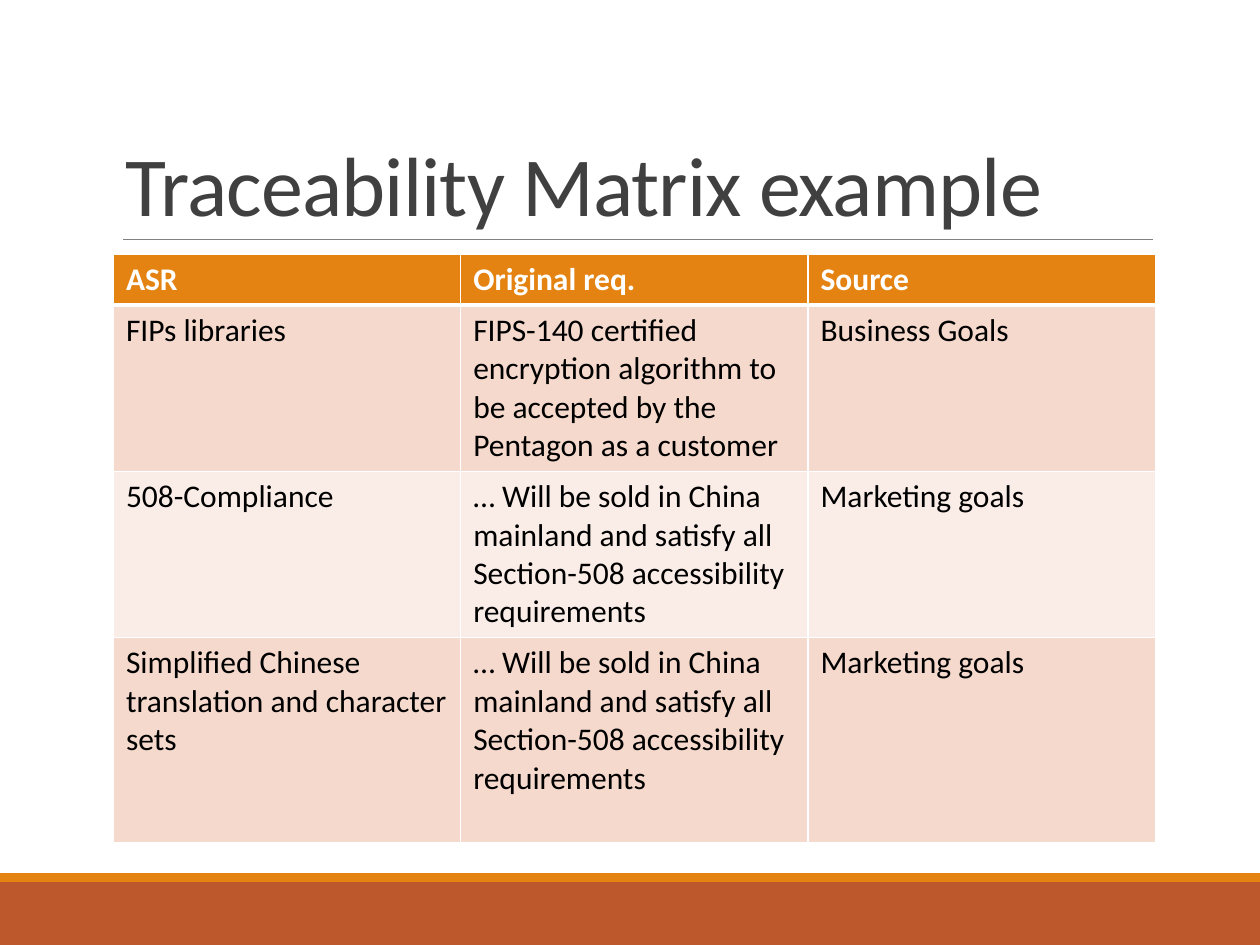
import dataclasses

import pptx
import pptx.dml.color
import pptx.enum.shapes
import pptx.enum.text
import pptx.oxml
import pptx.oxml.ns
import pptx.presentation
import pptx.shapes.autoshape
import pptx.slide
import pptx.table
import pptx.text.text
import pptx.util

Inches = pptx.util.Inches
Pt = pptx.util.Pt


@dataclasses.dataclass(frozen=True)
class Theme:
    font: str = "Calibri"
    title_size: float = 48
    table_size: float = 18
    title_color: str = "404040"
    rule_color: str = "808080"
    footer_color: str = "BD582C"
    accent_color: str = "E48312"
    header_text: str = "FFFFFF"
    body_text: str = "000000"
    border_color: str = "FFFFFF"
    row_fills: tuple[str, str] = ("F5D9CC", "FAEDE7")
    thin_border: float = 1
    header_border: float = 3


@dataclasses.dataclass(frozen=True)
class Band:
    top: float
    height: float
    color: str


@dataclasses.dataclass(frozen=True)
class Requirement:
    asr: str
    original: str
    source: str
    height: float


THEME = Theme()
SLIDE_WIDTH, SLIDE_HEIGHT = 10, 7.5
TABLE_LEFT, TABLE_TOP, TABLE_WIDTH = 0.9, 2.02, 8.27
CHINA_SALES = (
    "… Will be sold in China mainland and satisfy all "
    "Section-508 accessibility requirements"
)

FOOTER_BANDS = [
    Band(7, 0.5, THEME.footer_color),
    Band(6.93, 0.07, THEME.accent_color),
]
MATRIX = [
    Requirement("ASR", "Original req.", "Source", 0.4),
    Requirement(
        "FIPs libraries",
        "FIPS-140 certified encryption algorithm to be accepted "
        "by the Pentagon as a customer",
        "Business Goals",
        1.32,
    ),
    Requirement("508-Compliance", CHINA_SALES, "Marketing goals", 1.32),
    Requirement(
        "Simplified Chinese translation and character sets",
        CHINA_SALES,
        "Marketing goals",
        1.63,
    ),
]


def rgb(color: str) -> pptx.dml.color.RGBColor:
    return pptx.dml.color.RGBColor.from_string(color)


def add_run(
    paragraph: pptx.text.text._Paragraph,
    text: str,
    size: float,
    color: str,
    bold: bool = False,
) -> pptx.text.text._Run:
    run = paragraph.add_run()
    run.text = text
    run.font.name = THEME.font
    run.font.size = Pt(size)
    run.font.bold = bold
    run.font.color.rgb = rgb(color)
    return run


def draw_band(slide: pptx.slide.Slide, band: Band) -> None:
    strip = slide.shapes.add_shape(
        pptx.enum.shapes.MSO_SHAPE.RECTANGLE,
        Inches(0), Inches(band.top), Inches(SLIDE_WIDTH), Inches(band.height),
    )
    strip.shadow.inherit = False
    strip.fill.solid()
    strip.fill.fore_color.rgb = rgb(band.color)
    strip.line.fill.background()


def draw_title_rule(slide: pptx.slide.Slide) -> None:
    rule = slide.shapes.add_connector(
        pptx.enum.shapes.MSO_CONNECTOR.STRAIGHT,
        Inches(0.98), Inches(1.9), Inches(9.15), Inches(1.9),
    )
    rule.line.color.rgb = rgb(THEME.rule_color)
    rule.line.width = Pt(0.5)
    properties = rule._element.spPr
    properties.append(pptx.oxml.parse_xml(
        f"<a:effectLst {pptx.oxml.ns.nsdecls('a')}/>"
    ))


def draw_title(slide: pptx.slide.Slide, text: str) -> None:
    title = slide.shapes.add_textbox(
        Inches(0.9), Inches(0.31), Inches(8.25), Inches(1.59)
    )
    frame = title.text_frame
    frame.word_wrap = True
    frame.vertical_anchor = pptx.enum.text.MSO_ANCHOR.BOTTOM
    paragraph = frame.paragraphs[0]
    paragraph.line_spacing = 0.85
    run = add_run(paragraph, text, THEME.title_size, THEME.title_color)
    run._r.get_or_add_rPr().set("spc", "-50")


def set_borders(cell: pptx.table._Cell, top: float, bottom: float) -> None:
    """Draw all four cell edges; the side edges are always thin."""
    widths = {
        "lnL": THEME.thin_border, "lnR": THEME.thin_border,
        "lnT": top, "lnB": bottom,
    }
    properties = cell._tc.get_or_add_tcPr()
    # Edges must come before the fill in the cell properties.
    for position, (edge, width) in enumerate(widths.items()):
        properties.insert(position, pptx.oxml.parse_xml(
            f'<a:{edge} {pptx.oxml.ns.nsdecls("a")} w="{Pt(width)}">'
            f'<a:solidFill><a:srgbClr val="{THEME.border_color}"/></a:solidFill>'
            f"</a:{edge}>"
        ))


def draw_matrix(slide: pptx.slide.Slide, requirements: list[Requirement]) -> None:
    column_count = 3
    matrix = slide.shapes.add_table(
        len(requirements), column_count,
        Inches(TABLE_LEFT), Inches(TABLE_TOP), Inches(TABLE_WIDTH),
        Inches(sum(requirement.height for requirement in requirements)),
    ).table
    matrix.first_row = True
    matrix.horz_banding = False
    for column in matrix.columns:
        column.width = Inches(TABLE_WIDTH / column_count)

    for index, requirement in enumerate(requirements):
        header = index == 0
        fill = THEME.accent_color if header else THEME.row_fills[(index - 1) % 2]
        color = THEME.header_text if header else THEME.body_text
        top = THEME.header_border if index == 1 else THEME.thin_border
        bottom = THEME.header_border if header else THEME.thin_border
        matrix.rows[index].height = Inches(requirement.height)
        texts = (requirement.asr, requirement.original, requirement.source)
        for cell, text in zip(matrix.rows[index].cells, texts):
            cell.fill.solid()
            cell.fill.fore_color.rgb = rgb(fill)
            set_borders(cell, top, bottom)
            paragraph = cell.text_frame.paragraphs[0]
            add_run(paragraph, text, THEME.table_size, color, bold=header)


def main() -> None:
    presentation = pptx.Presentation()
    presentation.slide_width = Inches(SLIDE_WIDTH)
    presentation.slide_height = Inches(SLIDE_HEIGHT)
    slide = presentation.slides.add_slide(presentation.slide_layouts[6])
    for band in FOOTER_BANDS:
        draw_band(slide, band)
    draw_title_rule(slide)
    draw_title(slide, "Traceability Matrix example")
    draw_matrix(slide, MATRIX)
    presentation.save("out.pptx")


if __name__ == "__main__":
    main()
